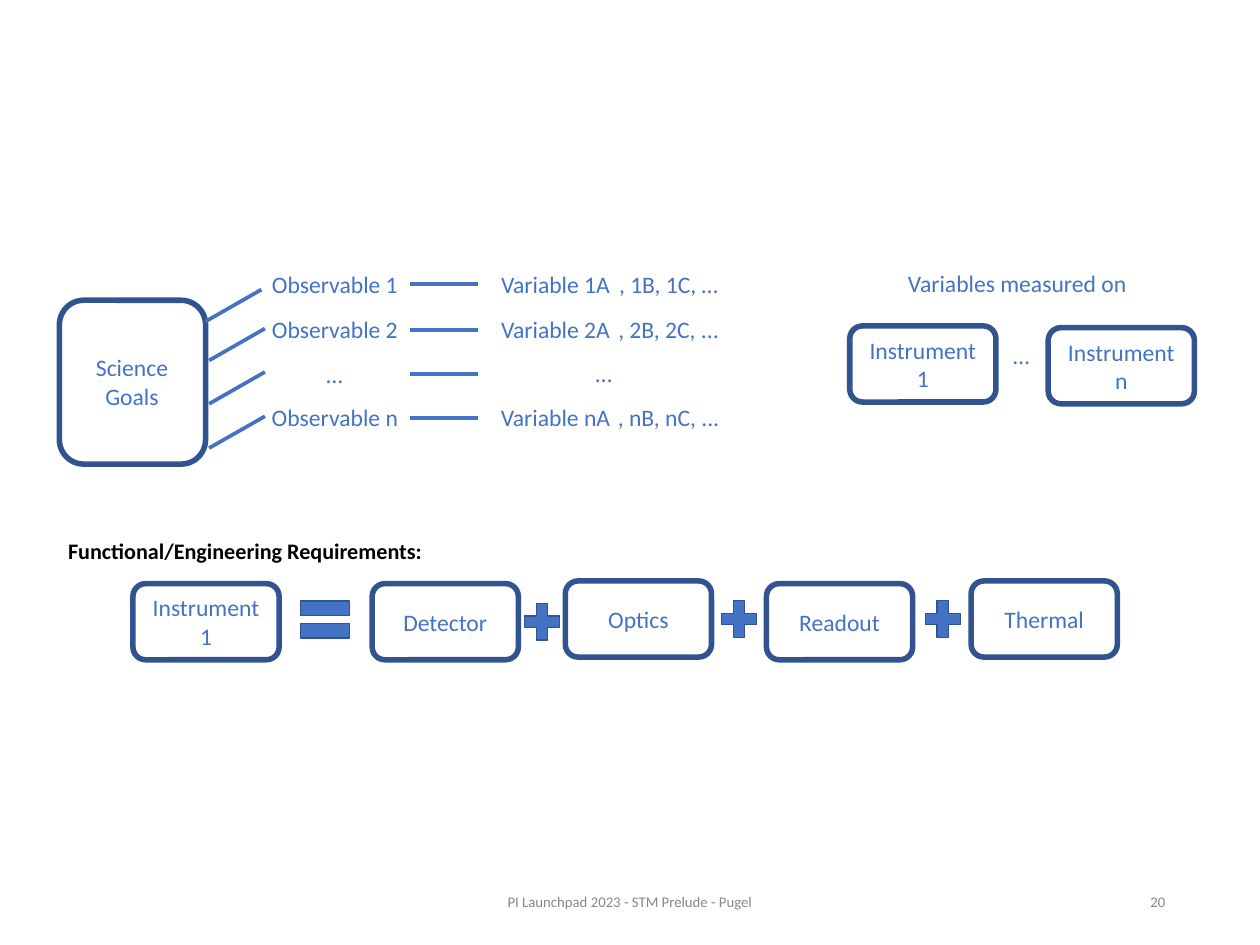
from dataclasses import dataclass
from lxml.etree import SubElement
from pptx import Presentation
from pptx.dml.color import RGBColor
from pptx.enum.shapes import MSO_CONNECTOR, MSO_SHAPE
from pptx.enum.text import MSO_ANCHOR, PP_ALIGN
from pptx.oxml.ns import qn
from pptx.shapes.autoshape import Shape
from pptx.text.text import TextFrame
from pptx.util import Emu, Pt

SCALE = 9144  # 100 px to the inch
BLUE, NAVY, GREY, BLACK = "4472C4", "31538F", "888888", "000000"


@dataclass
class Label:
    text: str
    x: int
    y: int
    w: int
    h: int = 42
    size: float = 19.2
    color: str = BLUE
    bold: bool = False
    align: PP_ALIGN = PP_ALIGN.CENTER
    anchor: MSO_ANCHOR = MSO_ANCHOR.TOP


@dataclass
class Card:
    text: str
    x: int
    y: int
    h: int = 86
    w: int = 165


@dataclass
class Sign:
    kind: MSO_SHAPE
    x: int
    y: int
    w: int = 54
    h: int = 56


@dataclass
class Row:
    y: int
    dash: int
    ray: tuple[int, int]
    labels: list[Label]


def px(n: int) -> Emu:
    return Emu(n * SCALE)


def paint(code: str) -> RGBColor:
    return RGBColor.from_string(code)


def write(frame: TextFrame, label: Label, wrap: bool) -> None:
    frame.word_wrap = wrap
    frame.vertical_anchor = label.anchor
    frame.text = label.text
    for para in frame.paragraphs:
        para.alignment = label.align
        for run in para.runs:
            run.font.name = "Calibri"
            run.font.size = Pt(label.size)
            run.font.bold = label.bold
            run.font.color.rgb = paint(label.color)


def add_label(label: Label) -> None:
    box = slide.shapes.add_textbox(px(label.x), px(label.y), px(label.w), px(label.h))
    write(box.text_frame, label, False)


def add_form(kind: MSO_SHAPE, x: int, y: int, w: int, h: int, line: float) -> Shape:
    form = slide.shapes.add_shape(kind, px(x), px(y), px(w), px(h))
    form.shadow.inherit = False
    form.line.color.rgb = paint(NAVY)
    form.line.width = Pt(line)
    return form


def add_card(card: Card) -> None:
    form = add_form(MSO_SHAPE.ROUNDED_RECTANGLE, card.x, card.y, card.w, card.h, 4.5)
    form.fill.background()
    if card.text:
        label = Label(card.text, card.x, card.y, card.w, anchor=MSO_ANCHOR.MIDDLE)
        write(form.text_frame, label, True)


def add_sign(sign: Sign) -> None:
    form = add_form(sign.kind, sign.x, sign.y, sign.w, sign.h, 1)
    form.fill.solid()
    form.fill.fore_color.rgb = paint(BLUE)


def add_line(x: int, y: int, dx: int, dy: int) -> None:
    line = slide.shapes.add_connector(
        MSO_CONNECTOR.STRAIGHT, px(x), px(y), px(x + dx), px(y + dy))
    line.line.color.rgb = paint(BLUE)
    line.line.width = Pt(3)
    SubElement(line._element.spPr, qn("a:effectLst"))


def trio(name: str, rest: str, y: int) -> list[Label]:
    """An observable, its first variable and the further ones."""
    return [Label(f"Observable {name}", 296, y, 164),
            Label(f"Variable {name}A", 554, y, 146),
            Label(rest, 687, y, 135)]


def dots(x: int, y: int) -> Label:
    return Label("…", x, y, 39)


rows = [
    Row(300, 321, (232, 363), trio("1", ", 1B, 1C, …", 300)),
    Row(351, 373, (236, 407), trio("2", ", 2B, 2C, ...", 351)),
    Row(400, 422, (236, 456), [dots(358, 401), dots(662, 400)]),
    Row(450, 472, (236, 506), trio("n", ", nB, nC, ...", 450)),
]
cards = [
    Card("", 67, 339, 185),
    Card("Instrument 1", 959, 368),
    Card("Instrument n", 1183, 370),
    Card("Instrument 1", 150, 659),
    Card("Detector", 420, 659),
    Card("Optics", 638, 656),
    Card("Readout", 865, 659),
    Card("Thermal", 1096, 656),
]
signs = [
    Sign(MSO_SHAPE.MATH_EQUAL, 329, 664, 75, 71),
    Sign(MSO_SHAPE.MATH_PLUS, 585, 674),
    Sign(MSO_SHAPE.MATH_PLUS, 807, 671),
    Sign(MSO_SHAPE.MATH_PLUS, 1037, 671),
]
labels = [
    Label("Science\nGoals", 98, 394, 102, 75),
    Label("Variables measured on", 1009, 299, 278),
    dots(1133, 380),
    Label("Functional/Engineering Requirements:", 67, 602, 429, 40, 18, BLACK, True,
          PP_ALIGN.LEFT),
    Label("PI Launchpad 2023 - STM Prelude - Pugel", 471, 989, 480, 57, 12, GREY,
          anchor=MSO_ANCHOR.MIDDLE),
    Label("20", 1005, 989, 320, 57, 12, GREY, align=PP_ALIGN.RIGHT,
          anchor=MSO_ANCHOR.MIDDLE),
]

deck = Presentation()
deck.slide_width, deck.slide_height = px(1422), px(1067)
slide = deck.slides.add_slide(deck.slide_layouts[6])

for card in cards:
    add_card(card)
for row in rows:
    add_line(*row.ray, 63, -36)
    add_line(463, row.dash, 76, 0)
    for label in row.labels:
        add_label(label)
for sign in signs:
    add_sign(sign)
for label in labels:
    add_label(label)

deck.save("out.pptx")
